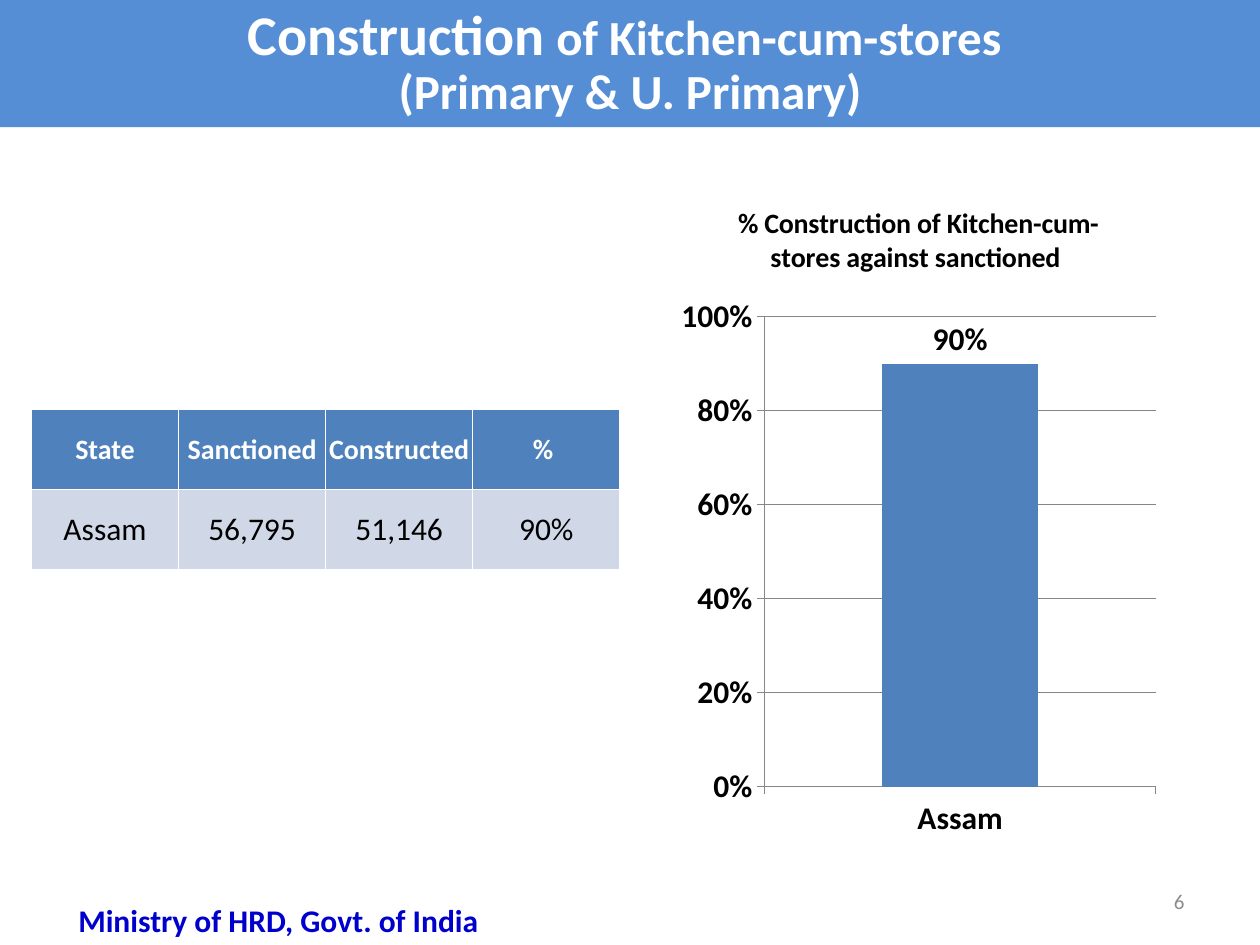
from typing import NamedTuple

from pptx import Presentation
from pptx.chart.data import CategoryChartData
from pptx.dml.color import RGBColor
from pptx.enum.chart import XL_CHART_TYPE as ChartType, XL_LABEL_POSITION as LabelPos
from pptx.enum.chart import XL_TICK_MARK as Tick
from pptx.enum.text import MSO_ANCHOR as Anchor, MSO_AUTO_SIZE as AutoSize, PP_ALIGN as Align
from pptx.util import Inches, Pt

WHITE = RGBColor(0xFF, 0xFF, 0xFF)
BLACK = RGBColor(0, 0, 0)
BANNER_BLUE = RGBColor(0x55, 0x8E, 0xD5)
BAR_BLUE = RGBColor(0x4F, 0x81, 0xBD)
ROW_BLUE = RGBColor(0xD0, 0xD8, 0xE8)
FOOTER_BLUE = RGBColor(0, 0, 0xCC)
NUMBER_GREY = RGBColor(0x8C, 0x8C, 0x8C)
AXIS_GREY = RGBColor(0x86, 0x86, 0x86)


class Box(NamedTuple):
    left: float
    top: float
    width: float
    height: float

    def lengths(self) -> list:
        return [Inches(value) for value in self]


class RowStyle(NamedTuple):
    fill: RGBColor
    color: RGBColor
    size: int
    bold: bool
    inset: float


class Caption(NamedTuple):
    text: str
    box: Box
    align: Align
    anchor: Anchor
    size: int
    color: RGBColor
    bold: bool


def style_font(font, size: int, color: RGBColor, bold: bool) -> None:
    values = {"name": "Calibri", "size": Pt(size), "bold": bold}
    for key, value in values.items():
        setattr(font, key, value)
    font.color.rgb = color


def add_run(paragraph, text: str, size: int, color: RGBColor, bold: bool) -> None:
    run = paragraph.add_run()
    run.text = text
    style_font(run.font, size, color, bold)


def add_banner(slide) -> None:
    banner = slide.shapes.title
    banner.left, banner.top, banner.width, banner.height = Box(0, 0, 10, 1.01).lengths()
    banner.fill.solid()
    banner.fill.fore_color.rgb = BANNER_BLUE
    frame = banner.text_frame
    frame.auto_size = AutoSize.NONE
    frame.vertical_anchor = Anchor.MIDDLE
    lines = [
        [("Construction", 32), (" of Kitchen-cum-stores ", 28)],
        [("(Primary & U. Primary)", 28)],
    ]
    for number, parts in enumerate(lines):
        line = frame.add_paragraph() if number else frame.paragraphs[0]
        line.alignment = Align.CENTER
        line.line_spacing = 0.9
        for text, size in parts:
            add_run(line, text, size, WHITE, True)


def add_progress_table(slide, box: Box) -> None:
    header = RowStyle(BAR_BLUE, WHITE, 16, True, 0)
    body = RowStyle(ROW_BLUE, BLACK, 18, False, 0.01)
    rows = [
        (header, ["State", "Sanctioned", "Constructed", "% "]),
        (body, ["Assam", "56,795", "51,146", "90%"]),
    ]
    # The default table style supplies the white cell borders
    table = slide.shapes.add_table(len(rows), 4, *box.lengths()).table
    for r, (style, texts) in enumerate(rows):
        for c, text in enumerate(texts):
            cell = table.cell(r, c)
            cell.fill.solid()
            cell.fill.fore_color.rgb = style.fill
            cell.vertical_anchor = Anchor.MIDDLE
            for side in ("left", "top", "right"):
                setattr(cell, f"margin_{side}", Inches(style.inset))
            cell.margin_bottom = 0
            entry = cell.text_frame.paragraphs[0]
            entry.alignment = Align.CENTER
            add_run(entry, text, style.size, style.color, style.bold)


def add_progress_chart(slide, box: Box) -> None:
    data = CategoryChartData(number_format="0%")
    data.categories = ["Assam"]
    data.add_series("Series 1", [0.9])
    chart = slide.shapes.add_chart(ChartType.COLUMN_CLUSTERED, *box.lengths(), data).chart
    style_font(chart.font, 18, BLACK, True)
    chart.has_legend = False
    heading = chart.chart_title.text_frame.paragraphs[0]
    add_run(heading, "% Construction of Kitchen-cum-stores against sanctioned ", 16, BLACK, True)

    # Axes
    percent = chart.value_axis
    scale = {"minimum_scale": 0, "maximum_scale": 1, "major_unit": 0.2, "has_major_gridlines": True}
    for key, value in scale.items():
        setattr(percent, key, value)
    percent.tick_labels.number_format = "0%"
    percent.tick_labels.number_format_is_linked = False
    for axis in (percent, chart.category_axis):
        axis.major_tick_mark = Tick.OUTSIDE
        axis.minor_tick_mark = Tick.NONE
    for line in (percent.format.line, chart.category_axis.format.line,
                 percent.major_gridlines.format.line):
        line.color.rgb = AXIS_GREY
        line.width = Pt(0.75)

    # Column and its label
    plot = chart.plots[0]
    plot.gap_width = 150
    plot.vary_by_categories = False
    column = plot.series[0]
    column.format.fill.solid()
    column.format.fill.fore_color.rgb = BAR_BLUE
    plot.has_data_labels = True
    label_values = {"show_value": True, "number_format": "0%",
                    "number_format_is_linked": False, "position": LabelPos.OUTSIDE_END}
    for key, value in label_values.items():
        setattr(plot.data_labels, key, value)
    style_font(plot.data_labels.font, 18, BLACK, True)


def add_caption(slide, caption: Caption) -> None:
    frame = slide.shapes.add_textbox(*caption.box.lengths()).text_frame
    frame.word_wrap = True
    frame.vertical_anchor = caption.anchor
    line = frame.paragraphs[0]
    line.alignment = caption.align
    add_run(line, caption.text, caption.size, caption.color, caption.bold)


def main() -> None:
    deck = Presentation()
    deck.slide_width, deck.slide_height = Inches(10), Inches(7.5)
    slide = deck.slides.add_slide(deck.slide_layouts[5])

    add_banner(slide)
    add_progress_table(slide, Box(0.25, 3.25, 4.67, 1.27))
    add_progress_chart(slide, Box(5.33, 1.42, 3.92, 5.33))

    # Page number and footer
    captions = [
        Caption("6", Box(7.17, 6.95, 2.33, 0.4), Align.RIGHT, Anchor.MIDDLE,
                12, NUMBER_GREY, False),
        Caption("Ministry of HRD, Govt. of India", Box(0.25, 7.1, 3.92, 0.4), Align.CENTER,
                Anchor.TOP, 18, FOOTER_BLUE, True),
    ]
    for caption in captions:
        add_caption(slide, caption)

    deck.save("out.pptx")


if __name__ == "__main__":
    main()
